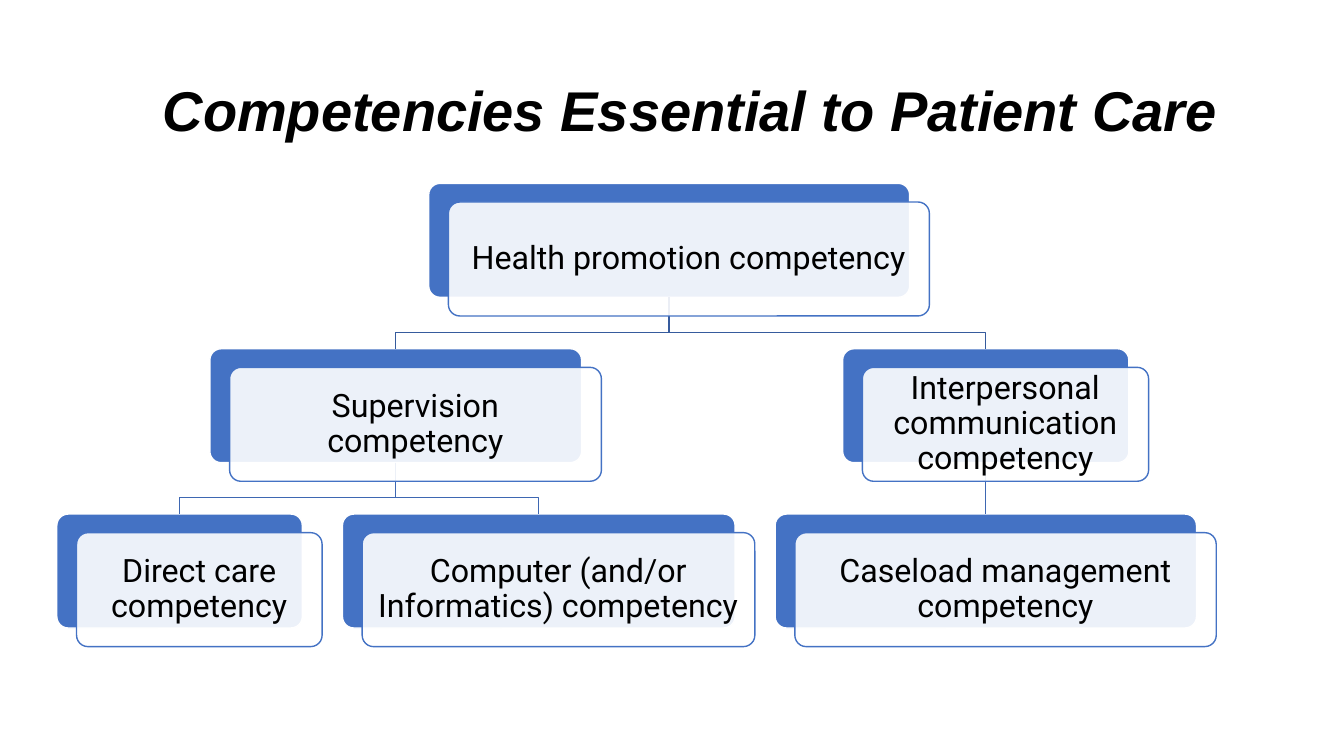
"""Build the slide of competencies essential to patient care."""
from lxml import etree
from pptx import Presentation
from pptx import util as u
from pptx.dml.color import RGBColor
from pptx.enum import shapes, text
from pptx.oxml.ns import qn

BLUE, WHITE, BLACK = "4472C4", "FFFFFF", "000000"
TIER_TOP, TIER_STEP, CARD_HEIGHT = 131, 118.1, 81.4
SHIFT_X, SHIFT_Y, BEND = 14.1, 13.3, 24.9
TIER_LINES = ["365B9D", "3E67B2"]

# name: (label, parent, tier, left, width)
CARDS = {
    "health": ("Health promotion competency", None, 0, 306.2, 343.6),
    "supervision": ("Supervision competency", "health", 1, 149.9, 265.6),
    "direct": ("Direct care competency", "supervision", 2, 40.6, 175.4),
    "computer": ("Computer (and/or Informatics) competency",
                 "supervision", 2, 244.6, 280.5),
    "interpersonal": ("Interpersonal communication competency",
                      "health", 1, 601.9, 204.5),
    "caseload": ("Caseload management competency",
                 "interpersonal", 2, 553.65, 301),
}


def color(value):
    """Turn a hex string into a colour."""
    return RGBColor.from_string(value)


def apply(target, values):
    """Set attributes of an object from a dict."""
    for name, value in values.items():
        setattr(target, name, value)


def set_line(shape, value):
    """Give a shape a one-point line."""
    shape.line.color.rgb = color(value)
    shape.line.width = u.Pt(1)


def write(shape, label, frame_format, para_format, font_format):
    """Put one formatted black paragraph into a shape."""
    frame = shape.text_frame
    apply(frame, {"word_wrap": True, "auto_size": text.MSO_AUTO_SIZE.NONE,
                  "vertical_anchor": text.MSO_ANCHOR.MIDDLE, **frame_format})
    para = frame.paragraphs[0]
    apply(para, {"alignment": text.PP_ALIGN.CENTER, "line_spacing": 0.9,
                 **para_format})
    span = para.add_run()
    span.text = label
    apply(span.font, font_format)
    span.font.color.rgb = color(BLACK)


def add_title(page, label):
    """Place and fill the title placeholder."""
    title = page.shapes.title
    apply(title, {"left": u.Pt(102.2), "top": u.Pt(28.8),
                  "width": u.Pt(792), "height": u.Pt(104.4)})
    write(title, label, {}, {}, {"name": "Arial", "size": u.Pt(40),
                                 "bold": True, "italic": True})


def add_box(page, left, top, width, fill, line):
    """Add one rounded rectangle of the card height."""
    box = page.shapes.add_shape(
        shapes.MSO_SHAPE.ROUNDED_RECTANGLE,
        u.Pt(left), u.Pt(top), u.Pt(width), u.Pt(CARD_HEIGHT))
    box.adjustments[0] = 0.1
    box.shadow.inherit = False
    box.fill.solid()
    box.fill.fore_color.rgb = color(fill)
    set_line(box, line)
    return box


def add_back(page, tier, left, width):
    """Add the blue rear box of a card."""
    return add_box(page, left, TIER_TOP + tier * TIER_STEP, width, BLUE, WHITE)


def add_front(page, label, tier, left, width):
    """Add the translucent front box of a card with its label."""
    top = TIER_TOP + tier * TIER_STEP + SHIFT_Y
    box = add_box(page, left + SHIFT_X, top, width, WHITE, BLUE)
    fill = box.element.spPr.find(qn("a:solidFill"))
    etree.SubElement(fill[0], qn("a:alpha")).set("val", "90000")
    margins = dict.fromkeys(
        ["margin_left", "margin_top", "margin_right", "margin_bottom"],
        u.Pt(7.2))
    write(box, label, margins, {"space_after": u.Pt(8)},
          {"name": "Roboto", "size": u.Pt(23)})


def add_link(page, parent, child, line):
    """Join two cards, straight if aligned and bent otherwise."""
    start_x = parent.left + parent.width // 2
    start_y = parent.top + parent.height
    end_x = child.left + child.width // 2
    if abs(start_x - end_x) < u.Pt(1):
        link = page.shapes.add_connector(
            shapes.MSO_CONNECTOR.STRAIGHT, start_x, start_y, end_x, child.top)
        link.begin_connect(parent, 2)
        link.end_connect(child, 0)
        set_line(link, line)
        etree.SubElement(link.element.spPr, qn("a:effectLst"))
        return
    bend_y = start_y + u.Pt(BEND)
    outline = page.shapes.build_freeform(start_x, start_y)
    outline.add_line_segments(
        [(start_x, bend_y), (end_x, bend_y), (end_x, child.top)], close=False)
    link = outline.convert_to_shape()
    link.shadow.inherit = False
    link.fill.background()
    set_line(link, line)


def main():
    """Build and save the deck."""
    deck = Presentation()
    apply(deck, {"slide_width": u.Pt(960), "slide_height": u.Pt(540)})
    page = deck.slides.add_slide(deck.slide_layouts[5])
    add_title(page, "Competencies Essential to Patient Care ")
    backs = {name: add_back(page, tier, left, width)
             for name, (_, _, tier, left, width) in CARDS.items()}
    for name, (_, parent, tier, _, _) in CARDS.items():
        if parent:
            add_link(page, backs[parent], backs[name], TIER_LINES[tier - 1])
    for label, _, tier, left, width in CARDS.values():
        add_front(page, label, tier, left, width)
    deck.save("out.pptx")


if __name__ == "__main__":
    main()
